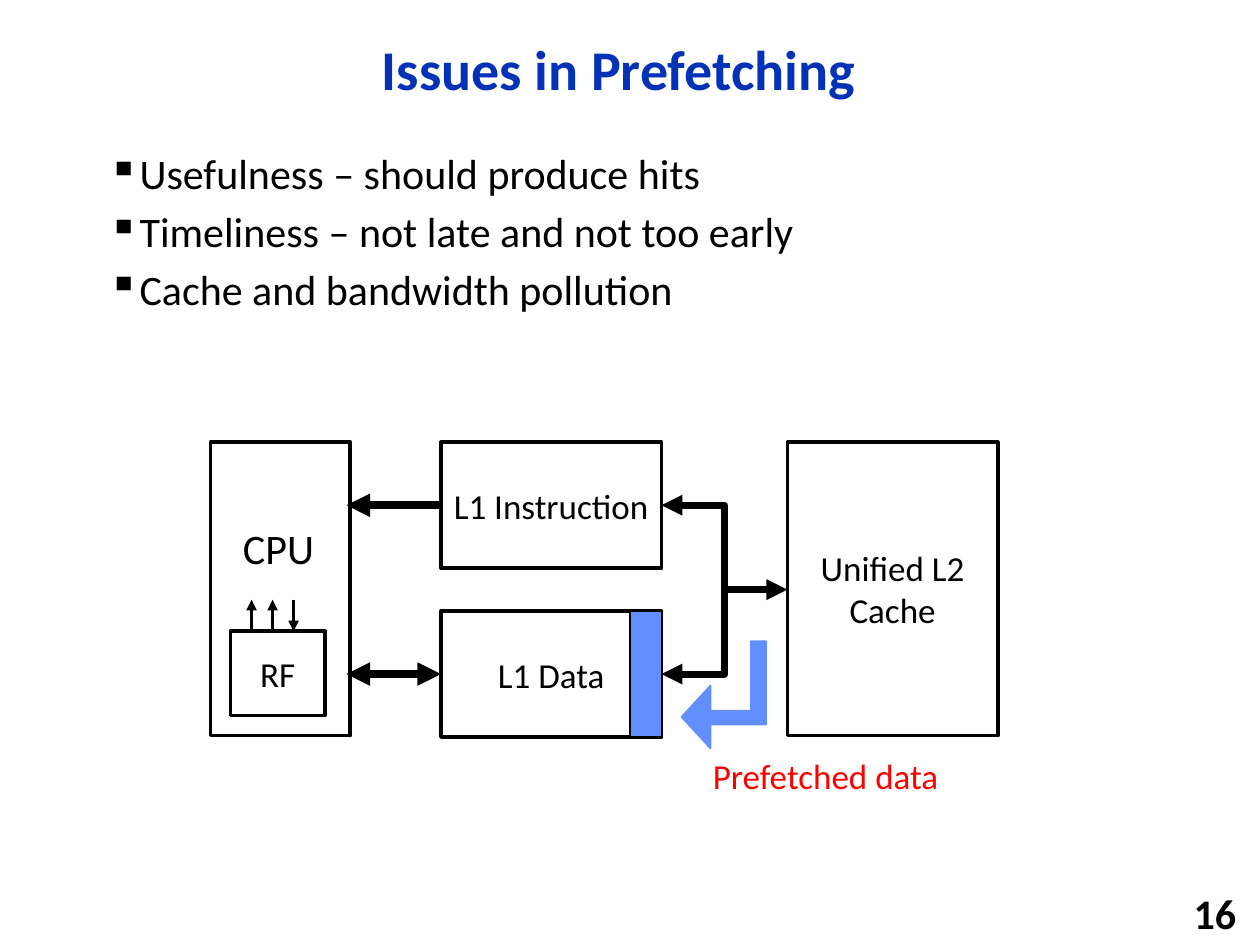
from lxml import etree
from pptx import Presentation
from pptx.dml.color import RGBColor
from pptx.enum.shapes import MSO_CONNECTOR, MSO_SHAPE
from pptx.enum.text import MSO_ANCHOR, PP_ALIGN
from pptx.oxml.ns import qn
from pptx.util import Inches, Pt

RECT = MSO_SHAPE.RECTANGLE
STRAIGHT = MSO_CONNECTOR.STRAIGHT
TOP, MIDDLE = MSO_ANCHOR.TOP, MSO_ANCHOR.MIDDLE
LEFT, CENTER, RIGHT = PP_ALIGN.LEFT, PP_ALIGN.CENTER, PP_ALIGN.RIGHT
FONT = "Calibri"
BLACK, WHITE, NAVY, BLUE, RED = "000000", "FFFFFF", "0332B7", "618FFD", "FF0000"
LEFT_SIDE = 1


def rgb(value):
    return RGBColor.from_string(value)


def set_text(shape, text, size, color=BLACK, bold=False, align=CENTER,
             anchor=MIDDLE, wrap=True):
    tf = shape.text_frame
    tf.text = text
    tf.word_wrap = wrap
    tf.vertical_anchor = anchor
    for p in tf.paragraphs:
        p.alignment = align
        for r in p.runs:
            r.font.name, r.font.size, r.font.bold = FONT, Pt(size), bold
            r.font.color.rgb = rgb(color)


def add_text(s, box, text, size, **style):
    tb = s.shapes.add_textbox(*map(Inches, box))
    set_text(tb, text, size, **style)
    return tb


def add_block(s, box, text="", fill=WHITE, weight=2, wrap=True):
    block = s.shapes.add_shape(RECT, *map(Inches, box))
    block.shadow.inherit = False
    block.fill.solid()
    block.fill.fore_color.rgb = rgb(fill)
    set_line(block, weight)
    if text:
        set_text(block, text, 20, wrap=wrap)
    return block


def set_line(shape, weight, color=BLACK, head=False, tail=False):
    """Style a line; head is the arrow at its start, tail the one at its end."""
    shape.line.width = Pt(weight)
    shape.line.color.rgb = rgb(color)
    ln = shape.line._get_or_add_ln()
    for tag, wanted in (("a:headEnd", head), ("a:tailEnd", tail)):
        if wanted:
            etree.SubElement(ln, qn(tag), type="triangle")


def add_arrow(s, start, end, weight, head=False):
    arrow = s.shapes.add_connector(STRAIGHT, *map(Inches, start + end))
    set_line(arrow, weight, head=head, tail=True)
    etree.SubElement(arrow._element.spPr, qn("a:effectLst"))
    return arrow


def add_path(s, points, close=False):
    pts = [(Inches(x), Inches(y)) for x, y in points]
    builder = s.shapes.build_freeform(*pts[0])
    builder.add_line_segments(pts[1:], close=close)
    path = builder.convert_to_shape()
    path.shadow.inherit = False
    return path


def add_bus(s, points, head=False):
    bus = add_path(s, points)
    bus.fill.background()
    set_line(bus, 4, head=head, tail=True)


def add_bullets(s, box, lines):
    tb = add_text(s, box, "\n".join(lines), 24, align=LEFT, anchor=TOP)
    for p in tb.text_frame.paragraphs:
        p.line_spacing = 0.9
        p.space_before = Pt(7)
        pPr = p._p.get_or_add_pPr()
        pPr.set("marL", str(Inches(0.25)))
        pPr.set("indent", str(-Inches(0.25)))
        etree.SubElement(pPr, qn("a:buChar"), char="▪")


def add_cpu(s, x, y, width, height):
    add_block(s, (x, y, width, height))
    rf_x, rf_y = x + 0.16, y + 1.5
    add_block(s, (rf_x, rf_y, 0.75, 0.67), "RF", wrap=False)
    for i, reads in enumerate((True, True, False)):
        port_x = rf_x + (i + 1) / 6
        ends = [(port_x, rf_y), (port_x, rf_y - 0.25)]
        start, end = ends if reads else reversed(ends)
        add_arrow(s, start, end, 2)
    add_text(s, (x, y + 0.59, 1.08, 0.5), "CPU", 24, anchor=TOP)


def add_prefetch(s, x, y):
    """Bent arrow, with the tip of its head at x, y, and its label."""
    outline = [(0, 0), (0.23, -0.25), (0.23, -0.05), (0.55, -0.05), (0.55, -0.6),
               (0.67, -0.6), (0.67, 0.06), (0.23, 0.06), (0.23, 0.25)]
    arrow = add_path(s, [(x + dx, y + dy) for dx, dy in outline], close=True)
    arrow.fill.solid()
    arrow.fill.fore_color.rgb = rgb(BLUE)
    set_line(arrow, 1, BLUE)
    add_text(s, (x + 0.15, y + 0.25, 2.07, 0.44), "Prefetched data", 20,
             color=RED, align=LEFT, anchor=TOP, wrap=False)


def add_cache_diagram(s, x, y):
    height, l1_w, l1_h = 2.33, 1.75, 1
    l1_x, l2_x = x + 1.83, x + 4.58
    l1_right, cpu_edge = l1_x + l1_w, x + 1.08
    data_y = y + 1.34
    instr_mid, data_mid = y + l1_h / 2, data_y + l1_h / 2
    bus_x, bus_y = (l1_right + l2_x) / 2, (instr_mid + data_mid) / 2

    add_cpu(s, x, y, 1.11, height)
    instr = add_block(s, (l1_x, y, l1_w, l1_h), "L1 Instruction", wrap=False)
    data = add_block(s, (l1_x, data_y, l1_w, l1_h), "L1 Data")
    add_block(s, (l1_right - 0.25, data_y, 0.25, l1_h), fill=BLUE, weight=1)
    add_block(s, (l2_x, y, 1.67, height), "Unified L2 Cache")

    for cache, mid, both_ways in ((instr, instr_mid, False), (data, data_mid, True)):
        arrow = add_arrow(s, (l1_x, mid), (cpu_edge, mid), 4.5, head=both_ways)
        arrow.begin_connect(cache, LEFT_SIDE)
    add_bus(s, [(l1_right, instr_mid), (bus_x, instr_mid), (bus_x, bus_y),
                (l2_x, bus_y)], head=True)
    add_bus(s, [(bus_x, bus_y), (bus_x, data_mid), (l1_right, data_mid)])
    add_prefetch(s, l1_right + 0.16, data_mid + 0.34)


def main():
    prs = Presentation()
    prs.slide_width, prs.slide_height = Inches(10), Inches(7.5)
    s = prs.slides.add_slide(prs.slide_layouts[6])
    title = add_text(s, (0.92, 0.17, 7.98, 0.81), "Issues in Prefetching", 32,
                     color=NAVY, bold=True)
    title.text_frame.paragraphs[0].line_spacing = 0.9
    add_bullets(s, (0.76, 1.17, 8.4, 5.53), [
        "Usefulness – should produce hits",
        "Timeliness – not late and not too early",
        "Cache and bandwidth pollution",
    ])
    add_cache_diagram(s, 1.67, 3.51)
    add_text(s, (7.83, 7.08, 2.08, 0.32), "16", 24, bold=True, align=RIGHT)
    prs.save("out.pptx")


if __name__ == "__main__":
    main()
